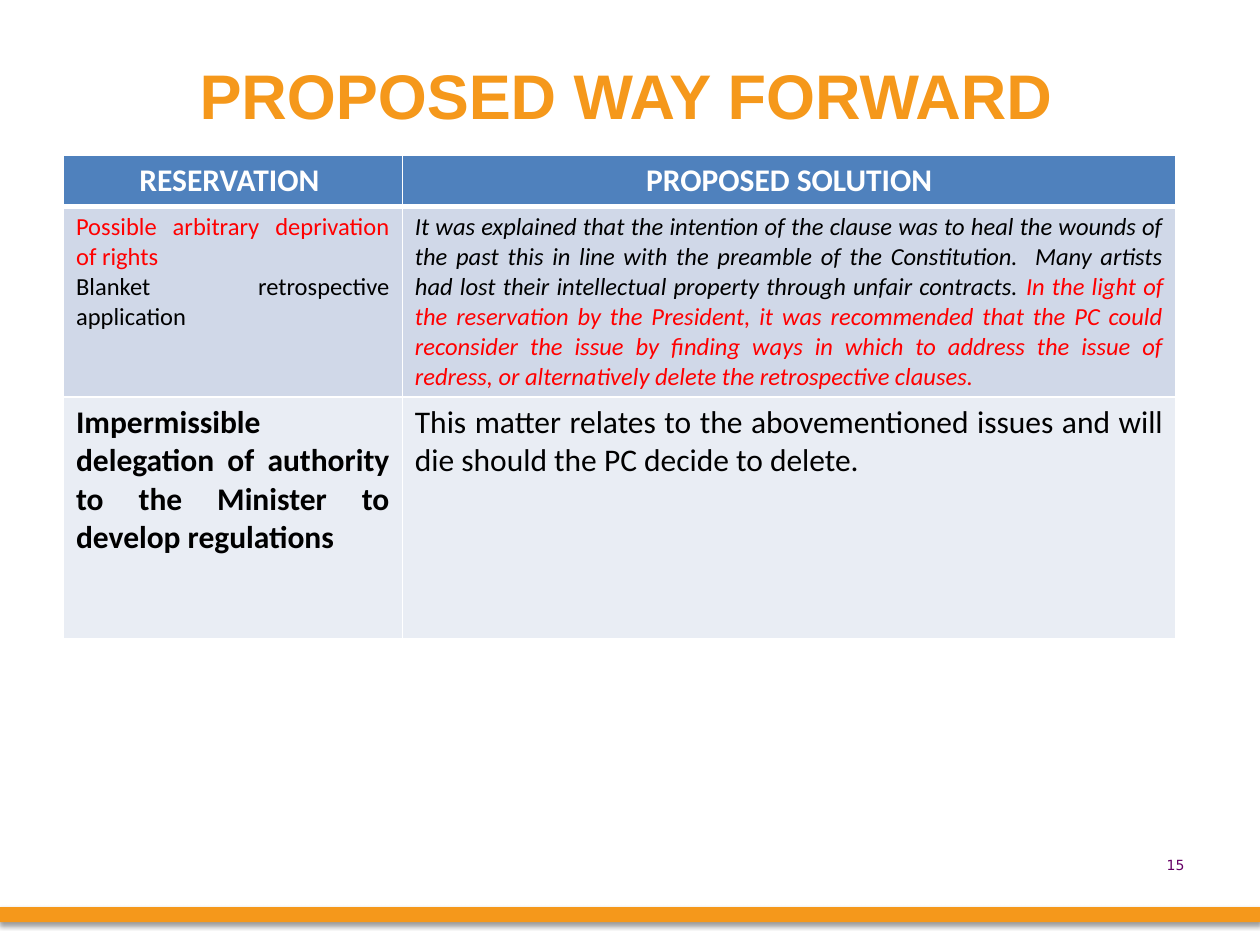
"""Build the slide that sets out the proposed way forward on each reservation."""
from dataclasses import dataclass

from lxml import etree
from pptx import Presentation
from pptx.dml.color import RGBColor
from pptx.enum.shapes import MSO_SHAPE
from pptx.enum.text import MSO_ANCHOR, PP_ALIGN
from pptx.oxml.ns import qn
from pptx.util import Cm, Pt

CENTER, JUSTIFY, RIGHT = PP_ALIGN.CENTER, PP_ALIGN.JUSTIFY, PP_ALIGN.RIGHT
TOP, MIDDLE = MSO_ANCHOR.TOP, MSO_ANCHOR.MIDDLE
RECTANGLE = MSO_SHAPE.RECTANGLE
ORANGE, PURPLE, RED = "F5981B", "660066", "FF0000"
BLACK, WHITE = "000000", "FFFFFF"
COLUMN_WIDTHS = (6.83, 15.6)
BORDER_TAGS = ("a:lnL", "a:lnR", "a:lnT", "a:lnB")


@dataclass(frozen=True)
class Phrase:
    """A stretch of cell text with one format."""

    text: str
    color: str = BLACK
    bold: bool = False
    italic: bool = False


@dataclass(frozen=True)
class Row:
    """A table row; each cell holds paragraphs made of phrases."""

    height: float
    fill: str
    size: int
    align: PP_ALIGN
    cells: tuple
    bottom_border: int = 1


ROWS = (
    Row(1.03, "4F81BD", 18, CENTER, (
        ((Phrase("RESERVATION ", WHITE, bold=True),),),
        ((Phrase("PROPOSED SOLUTION", WHITE, bold=True),),),
    ), bottom_border=3),
    Row(3.84, "D0D8E8", 14, JUSTIFY, (
        (
            (Phrase("Possible arbitrary deprivation of rights", RED),),
            (Phrase("Blanket retrospective application "),),
        ),
        ((
            Phrase("It was explained that the intention of the clause was to heal "
                   "the wounds of the past this in line with the preamble of the "
                   "Constitution.  Many artists had lost their intellectual property "
                   "through unfair contracts. ", italic=True),
            Phrase("In the light of the reservation by the President, it was "
                   "recommended that the PC could reconsider the issue by finding "
                   "ways in which to address the issue of redress, or alternatively "
                   "delete the retrospective clauses.  ", RED, italic=True),
        ),),
    )),
    Row(4.88, "E9EDF4", 18, JUSTIFY, (
        ((Phrase("Impermissible delegation of authority to the Minister to "
                 "develop regulations", bold=True),),),
        ((Phrase("This matter relates to the abovementioned issues and will die "
                 "should the PC decide to delete."),),),
    )),
)


def rgb(value: str) -> RGBColor:
    """Turn a hex string into a colour."""
    return RGBColor.from_string(value)


def write(paragraph, text: str, *, size: int, color: str, font: str = "Calibri",
          bold: bool = False, italic: bool = False, align: PP_ALIGN = CENTER) -> None:
    """Add a formatted run to a paragraph."""
    paragraph.alignment = align
    run = paragraph.add_run()
    run.text = text
    run.font.name = font
    run.font.size = Pt(size)
    run.font.bold = bold
    run.font.italic = italic
    run.font.color.rgb = rgb(color)


def add_label(slide, text: str, left: float, top: float, width: float, height: float,
              anchor: MSO_ANCHOR, **style) -> None:
    """Add a wrapped text box with a single line."""
    label = slide.shapes.add_textbox(Cm(left), Cm(top), Cm(width), Cm(height))
    label.text_frame.word_wrap = True
    label.text_frame.vertical_anchor = anchor
    write(label.text_frame.paragraphs[0], text, **style)


def add_footer_bar(slide) -> None:
    """Add the orange bar with its soft shadow."""
    bar = slide.shapes.add_shape(RECTANGLE, Cm(0), Cm(18.29), Cm(25.4), Cm(0.3))
    bar.fill.solid()
    bar.fill.fore_color.rgb = rgb(ORANGE)
    bar.line.fill.background()
    bar.shadow.inherit = False
    effects = bar.element.spPr.find(qn("a:effectLst"))
    shadow = etree.SubElement(effects, qn("a:outerShdw"), blurRad=str(Pt(3.1)),
                              dist=str(Pt(1.6)), dir="5400000", rotWithShape="0")
    shade = etree.SubElement(shadow, qn("a:srgbClr"), val=BLACK)
    etree.SubElement(shade, qn("a:alpha"), val="38000")


def set_borders(cell, top: int, bottom: int) -> None:
    """Draw white borders around a cell, ahead of its fill."""
    properties = cell._tc.get_or_add_tcPr()
    for index, (tag, width) in enumerate(zip(BORDER_TAGS, (1, 1, top, bottom))):
        border = etree.Element(qn(tag), w=str(Pt(width)))
        fill = etree.SubElement(border, qn("a:solidFill"))
        etree.SubElement(fill, qn("a:srgbClr"), val=WHITE)
        properties.insert(index, border)


def fill_cell(cell, row: Row, paragraphs: tuple, top_border: int) -> None:
    """Give a cell its fill, borders and text."""
    cell.fill.solid()
    cell.fill.fore_color.rgb = rgb(row.fill)
    set_borders(cell, top_border, row.bottom_border)
    frame = cell.text_frame
    for number, phrases in enumerate(paragraphs):
        paragraph = frame.add_paragraph() if number else frame.paragraphs[0]
        for phrase in phrases:
            write(paragraph, phrase.text, size=row.size, color=phrase.color,
                  bold=phrase.bold, italic=phrase.italic, align=row.align)


def add_reservations(slide) -> None:
    """Add the table of reservations and solutions."""
    table = slide.shapes.add_table(
        len(ROWS), len(COLUMN_WIDTHS), Cm(1.28), Cm(3.13), Cm(sum(COLUMN_WIDTHS)),
        Cm(sum(row.height for row in ROWS))).table
    for column, width in zip(table.columns, COLUMN_WIDTHS):
        column.width = Cm(width)
    top_border = 1
    for row_index, row in enumerate(ROWS):
        table.rows[row_index].height = Cm(row.height)
        for column_index, paragraphs in enumerate(row.cells):
            fill_cell(table.cell(row_index, column_index), row, paragraphs, top_border)
        top_border = row.bottom_border


def main() -> None:
    """Build and save the slide."""
    deck = Presentation()
    deck.slide_width, deck.slide_height = Cm(25.4), Cm(19.05)
    slide = deck.slides.add_slide(deck.slide_layouts[6])
    add_footer_bar(slide)
    add_label(slide, "PROPOSED WAY FORWARD", 1.19, 0.91, 22.86, 1.98, MIDDLE,
              size=36, color=ORANGE, font="Arial", bold=True)
    add_reservations(slide)
    add_label(slide, "15", 22.71, 17.15, 1.42, 1.02, TOP,
              size=8, color=PURPLE, font="DejaVu Sans", align=RIGHT)
    deck.save("out.pptx")


if __name__ == "__main__":
    main()
